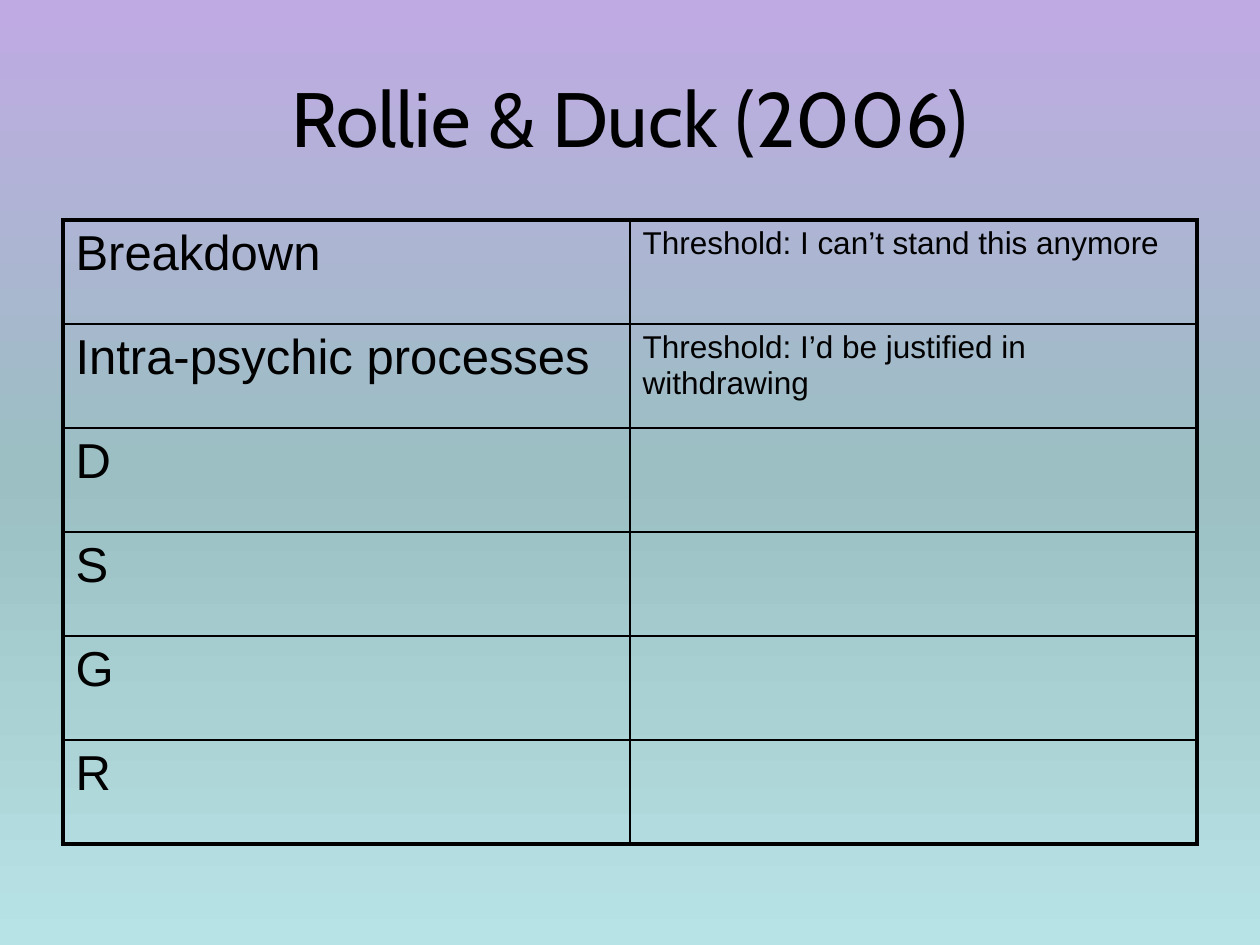
from copy import deepcopy
from dataclasses import dataclass

from lxml import etree
from pptx import Presentation
from pptx.dml.color import RGBColor
from pptx.enum import text
from pptx.oxml.ns import qn
from pptx.util import Pt

EMU_PER_PX = 914400 / 126


@dataclass(frozen=True)
class Theme:
    ink: str = "000000"
    gradient: tuple = ((0, "BFAAE4"), (50, "9BBFC2"), (100, "B8E3E6"))
    title_font: str = "Cabin"
    body_font: str = "Arial"
    title_size: int = 44
    phase_size: int = 28
    threshold_size: int = 18
    outer_border: float = 2.25
    inner_border: float = 1


THEME = Theme()

PHASES = [
    ("Breakdown", "Threshold: I can’t stand this anymore"),
    ("Intra-psychic processes", "Threshold: I’d be justified in withdrawing"),
    ("D", ""),
    ("S", ""),
    ("G", ""),
    ("R", ""),
]


def px(length):
    return round(length * EMU_PER_PX)


def style_font(font, name, size):
    font.name = name
    font.size = Pt(size)
    font.color.rgb = RGBColor.from_string(THEME.ink)


def paint_background(slide):
    fill = slide.background.fill
    fill.gradient()
    fill.gradient_angle = 270
    # A new gradient has two stops; the middle one is a copy of the first
    stops = slide.element.find(".//" + qn("a:gsLst"))
    stops.insert(1, deepcopy(stops[0]))
    for stop, (position, color) in zip(fill.gradient_stops, THEME.gradient):
        stop.position = position / 100
        stop.color.rgb = RGBColor.from_string(color)


def add_title(slide, wording):
    title = slide.shapes.title
    title.left, title.top, title.width, title.height = map(px, (63, 38, 1134, 157))
    frame = title.text_frame
    frame.text = wording
    frame.word_wrap = True
    frame.vertical_anchor = text.MSO_ANCHOR.MIDDLE
    heading = frame.paragraphs[0]
    heading.alignment = text.PP_ALIGN.CENTER
    style_font(heading.runs[0].font, THEME.title_font, THEME.title_size)


def set_borders(cell, widths):
    """Draw the left, right, top and bottom borders, in that order."""
    properties = cell._tc.get_or_add_tcPr()
    for index, (side, width) in enumerate(zip("LRTB", widths)):
        line = etree.Element(qn(f"a:ln{side}"), w=str(Pt(width)))
        solid = etree.SubElement(line, qn("a:solidFill"))
        etree.SubElement(solid, qn("a:srgbClr"), val=THEME.ink)
        properties.insert(index, line)


def write_cell(cell, wording, size):
    cell.text_frame.text = wording
    paragraph = cell.text_frame.paragraphs[0]
    # Space before as a share of the line height
    before = etree.SubElement(paragraph._p.get_or_add_pPr(), qn("a:spcBef"))
    etree.SubElement(before, qn("a:spcPct"), val="20000")
    for run in paragraph.runs:
        style_font(run.font, THEME.body_font, size)


def add_phase_table(slide, phases):
    row_height, column_width = 104, 567
    row_count, column_count = len(phases), len(phases[0])
    table = slide.shapes.add_table(
        row_count, column_count, px(63), px(220),
        px(column_width * column_count), px(row_height * row_count)).table
    table.first_row = table.horz_banding = False

    sizes = (THEME.phase_size, THEME.threshold_size)
    for r, phase in enumerate(phases):
        for c, (wording, size) in enumerate(zip(phase, sizes)):
            cell = table.cell(r, c)
            cell.fill.background()
            write_cell(cell, wording, size)
            # The frame of the table is heavier than its grid
            on_frame = (c == 0, c == column_count - 1, r == 0, r == row_count - 1)
            set_borders(cell, [THEME.outer_border if outer else THEME.inner_border
                               for outer in on_frame])


def main():
    deck = Presentation()
    deck.slide_width, deck.slide_height = px(1260), px(945)
    slide = deck.slides.add_slide(deck.slide_layouts.get_by_name("Title Only"))
    paint_background(slide)
    add_title(slide, "Rollie & Duck (2006)")
    add_phase_table(slide, PHASES)
    deck.save("out.pptx")


if __name__ == "__main__":
    main()
